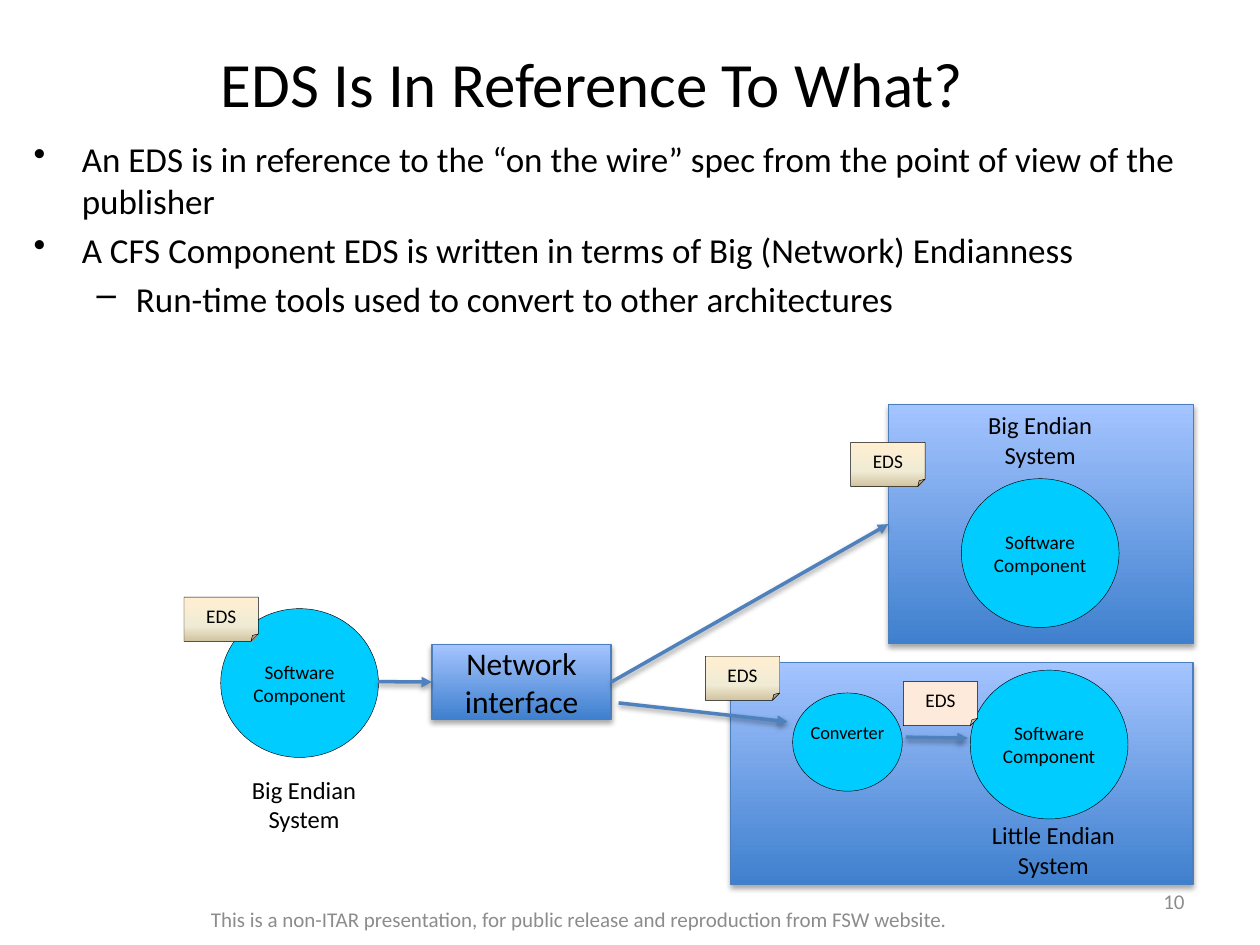
from lxml import etree
from pptx import Presentation
from pptx.dml.color import RGBColor
from pptx.enum.shapes import MSO_CONNECTOR, MSO_SHAPE
from pptx.enum.text import MSO_ANCHOR, PP_ALIGN
from pptx.oxml.ns import qn
from pptx.util import Cm, Pt

RECT, OVAL, NOTE = MSO_SHAPE.RECTANGLE, MSO_SHAPE.OVAL, MSO_SHAPE.FOLDED_CORNER
STRAIGHT = MSO_CONNECTOR.STRAIGHT
TOP, MIDDLE = MSO_ANCHOR.TOP, MSO_ANCHOR.MIDDLE
LEFT, CENTER, RIGHT = PP_ALIGN.LEFT, PP_ALIGN.CENTER, PP_ALIGN.RIGHT
SIDE_LEFT, SIDE_RIGHT = 1, 3

THEME = {
    "font": "Calibri", "text": "000000", "muted": "8C8C8C",
    "title": 36, "body": 20, "box": 18, "label": 14, "footer": 12,
    "small": 11, "converter": 10.5,
    "circle": "00CCFF", "outline": "000000", "box_line": "4B7EBC",
    "arrow": "4F81BD", "note": "FDEADA",
    "box_stops": [(0, "3F80CE"), (100, "A4C4FF")],
    "note_stops": [(0, "FFEFD1"), (65, "F0EBD5"), (100, "D1C39F")],
}

# Content; places are left, top, width, height in cm
TITLE = "EDS Is In Reference To What?"
BULLETS = [
    (0, "An EDS is in reference to the “on the wire” spec from the point of view of the publisher"),
    (0, "A CFS Component EDS is written in terms of Big (Network) Endianness"),
    (1, "Run-time tools used to convert to other architectures"),
]
BULLET_STYLES = [("•", 0.97, 0.97), ("–", 2.06, 0.79)]  # mark, margin, hanging
FOOTER = "This is a non-ITAR presentation, for public release and reproduction from FSW website."
PAGE = "10"

BOXES = {
    "little": ((14.73, 13.36, 9.32, 4.47), []),
    "big": ((17.91, 8.15, 6.15, 4.83), []),
    "network": ((8.71, 13, 3.61, 1.5), ["Network", "interface"]),
}
COMPONENT_SIZE = (3.18, 3)
COMPONENTS = [(4.45, 12.27), (19.56, 13.51), (19.38, 9.65)]
CONVERTER = (15.98, 13.97, 2.21, 1.98)
LABELS = [
    ((4.67, 15.49, 2.92, 1.45), ["Big Endian", "System"]),
    ((19.61, 16.41, 3.25, 1.45), ["Little Endian", "System"]),
    ((19.51, 8.15, 2.92, 1.45), ["Big Endian", "System"]),
]
NOTE_SIZE = (1.5, 0.89)
NOTES = [  # position, shaded
    ((14.22, 13.23), True), ((18.21, 13.74), False),
    ((17.15, 8.92), True), ((3.71, 12.04), True),
]
ARROWS = [  # each end is a point or a (box, side) pair
    ((7.62, 13.74), ("network", SIDE_LEFT)),
    ((12.47, 14.17), (15.88, 14.55)),
    (("network", SIDE_RIGHT), ("big", SIDE_LEFT)),
    ((18.26, 14.86), (19.51, 14.88)),
]


def rgb(value):
    return RGBColor.from_string(value)


def node(parent, tag, **attrs):
    return etree.SubElement(parent, qn(tag), {k: str(v) for k, v in attrs.items()})


def set_text(s, lines, size, align=CENTER, anchor=TOP, color="text", wrap=True):
    tf = s.text_frame
    tf.word_wrap, tf.vertical_anchor = wrap, anchor
    for i, line in enumerate(lines):
        p = tf.paragraphs[0] if i == 0 else tf.add_paragraph()
        p.text, p.alignment = line, align
        p.font.name, p.font.size = THEME["font"], Pt(THEME[size])
        p.font.color.rgb = rgb(THEME[color])
    return tf


def add_text(place, lines, size, **style):
    s = slide.shapes.add_textbox(*map(Cm, place))
    return set_text(s, lines, size, **style)


def add_shape(kind, place, fill, line, width, angle=0):
    """Fill is one colour or a list of gradient stops."""
    s = slide.shapes.add_shape(kind, *map(Cm, place))
    s.shadow.inherit = False
    if isinstance(fill, str):
        s.fill.solid()
        s.fill.fore_color.rgb = rgb(fill)
    else:
        s.fill.gradient()
        s.fill.gradient_angle = angle
        stops = s._element.spPr.find(".//" + qn("a:gsLst"))
        stops[:] = []
        for pos, color in fill:
            node(node(stops, "a:gs", pos=pos * 1000), "a:srgbClr", val=color)
    s.line.color.rgb, s.line.width = rgb(line), Pt(width)
    return s


def add_shadow(s, distance, alpha):
    sp_pr = s._element.spPr
    effects = sp_pr.find(qn("a:effectLst"))
    if effects is None:
        effects = node(sp_pr, "a:effectLst")
    shadow = node(effects, "a:outerShdw", blurRad=Pt(3.1), dist=Pt(distance),
                  dir=5400000, rotWithShape=0)
    node(node(shadow, "a:srgbClr", val="000000"), "a:alpha", val=alpha * 1000)


def no_insets(tf):
    tf.margin_left = tf.margin_right = tf.margin_top = tf.margin_bottom = 0


prs = Presentation()
prs.slide_width, prs.slide_height = Cm(25.4), Cm(19.05)
slide = prs.slides.add_slide(prs.slide_layouts[6])

# Title and bullets
add_text((0.51, 0.74, 22.86, 1.85), [TITLE], "title", anchor=MIDDLE)
tf = add_text((0.43, 2.64, 23.7, 7.87), [text for _, text in BULLETS], "body", align=LEFT)
for p, (level, _) in zip(tf.paragraphs, BULLETS):
    mark, margin, hanging = BULLET_STYLES[level]
    p.level, p.space_before = level, Pt(THEME["body"] * 0.2)
    p_pr = p._p.get_or_add_pPr()
    p_pr.set("marL", str(Cm(margin)))
    p_pr.set("indent", str(-Cm(hanging)))
    bullet = etree.Element(qn("a:buChar"), char=mark)
    p_pr.find(qn("a:defRPr")).addprevious(bullet)

# System panels and network box
boxes = {}
for name, (place, lines) in BOXES.items():
    s = add_shape(RECT, place, THEME["box_stops"], THEME["box_line"], 0.75, angle=90)
    add_shadow(s, 1.8, 35)
    set_text(s, lines, "box", anchor=MIDDLE)
    boxes[name] = s

# Software components and converter
for corner in COMPONENTS:
    s = add_shape(OVAL, corner + COMPONENT_SIZE, THEME["circle"], THEME["outline"], 0.25)
    no_insets(set_text(s, ["Software Component"], "small", anchor=MIDDLE))
s = add_shape(OVAL, CONVERTER, THEME["circle"], THEME["outline"], 0.25)
tf = set_text(s, ["Converter"], "converter", anchor=MIDDLE, wrap=False)
no_insets(tf)
tf.margin_bottom = Cm(0.4)

# System labels
for place, lines in LABELS:
    add_text(place, lines, "label", wrap=False)

# Arrows
for ends in ARROWS:
    points = [(0, 0) if end[0] in boxes else end for end in ends]
    s = slide.shapes.add_connector(STRAIGHT, *(Cm(v) for point in points for v in point))
    for end, join in zip(ends, (s.begin_connect, s.end_connect)):
        if end[0] in boxes:
            join(boxes[end[0]], end[1])
    s.line.color.rgb, s.line.width = rgb(THEME["arrow"]), Pt(2)
    node(s.line._get_or_add_ln(), "a:tailEnd", type="triangle")
    add_shadow(s, 1.6, 38)

# EDS notes
for corner, shaded in NOTES:
    fill = THEME["note_stops"] if shaded else THEME["note"]
    s = add_shape(NOTE, corner + NOTE_SIZE, fill, THEME["outline"], 0.25, angle=270)
    tf = set_text(s, ["EDS"], "small", anchor=MIDDLE)
    tf.margin_left = tf.margin_right = 0

# Footer and page number
add_text((3.23, 18.19, 16.89, 0.66), [FOOTER], "footer", anchor=MIDDLE, color="muted")
add_text((22.78, 17.65, 1.35, 1.02), [PAGE], "footer", align=RIGHT, anchor=MIDDLE, color="muted")

prs.save("out.pptx")
